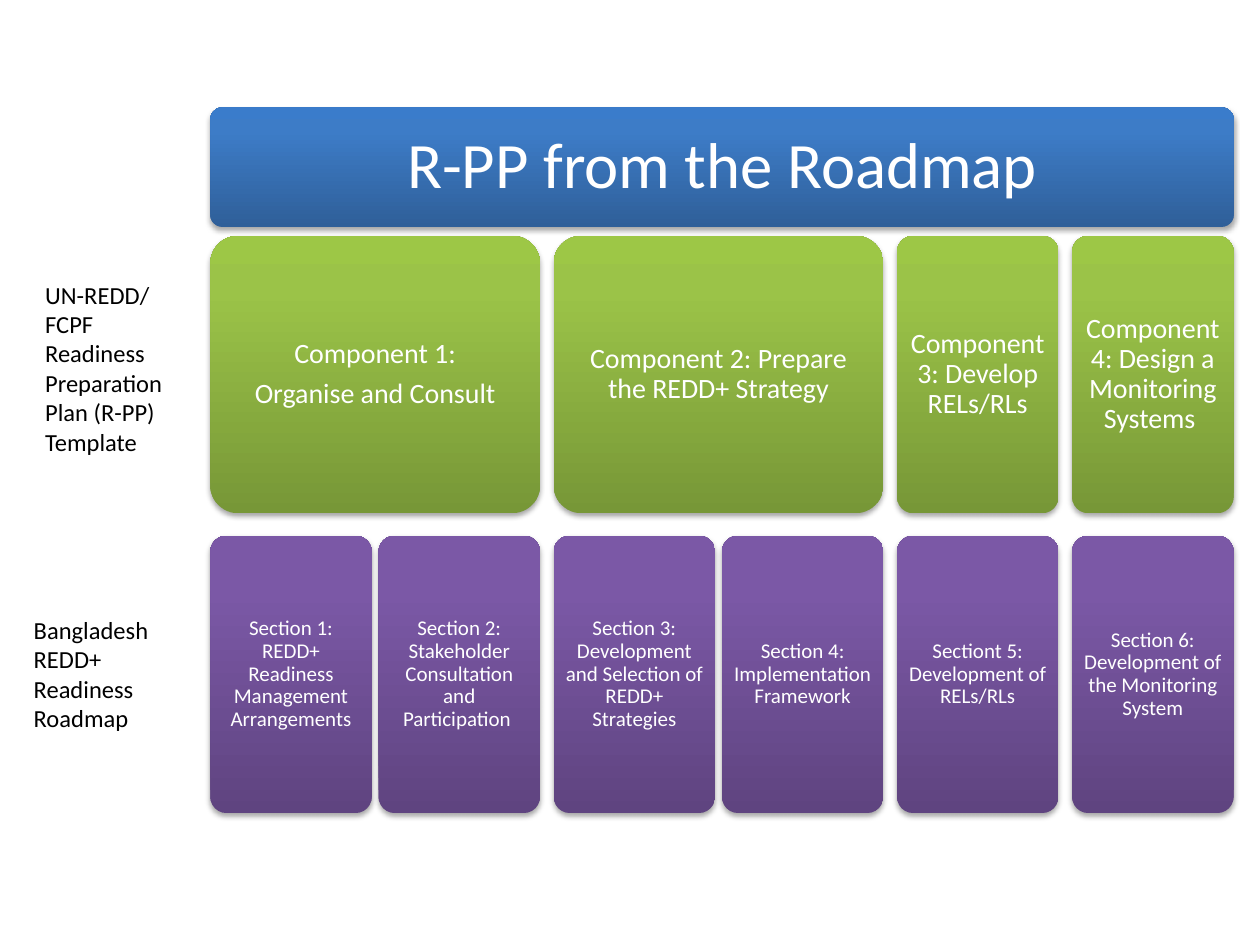
from copy import deepcopy

from lxml import etree
from pptx import Presentation
from pptx.dml.color import RGBColor
from pptx.enum.shapes import MSO_SHAPE
from pptx.enum.text import MSO_ANCHOR, MSO_AUTO_SIZE, PP_ALIGN
from pptx.oxml.ns import qn
from pptx.util import Pt

ROUND = MSO_SHAPE.ROUNDED_RECTANGLE
MIDDLE = MSO_ANCHOR.MIDDLE
FIXED = MSO_AUTO_SIZE.NONE
GROW = MSO_AUTO_SIZE.SHAPE_TO_FIT_TEXT
CENTER = PP_ALIGN.CENTER

WHITE = RGBColor(0xFF, 0xFF, 0xFF)
BLACK = RGBColor(0, 0, 0)
BLUE = (RGBColor(0x2F, 0x5F, 0x99), RGBColor(0x3D, 0x7C, 0xC7), RGBColor(0x3A, 0x7C, 0xCB))
GREEN = (RGBColor(0x77, 0x97, 0x37), RGBColor(0x9B, 0xC3, 0x48), RGBColor(0x9D, 0xC7, 0x46))
PURPLE = (RGBColor(0x5F, 0x44, 0x80), RGBColor(0x7B, 0x58, 0xA6), RGBColor(0x7C, 0x57, 0xA8))

FONT = "Calibri"
LEFT, COL = 120.2, 92.3
NEAR, FAR = 3.85, 7.75
HEAD_TOP, HEAD_H = 61.4, 68.3
COMP_TOP, SECT_TOP, CARD_H = 134.8, 306.1, 158.5

GROUPS = [
    (["Component 1:", "Organise and Consult"],
     ["Section 1: REDD+ Readiness Management Arrangements",
      "Section 2: Stakeholder Consultation and Participation "]),
    (["Component 2: Prepare the REDD+ Strategy"],
     ["Section 3: Development and Selection of REDD+ Strategies",
      "Section 4: Implementation Framework"]),
    (["Component 3: Develop RELs/RLs"],
     ["Sectiont 5: Development of RELs/RLs"]),
    (["Component 4: Design a Monitoring Systems "],
     ["Section 6: Development of the Monitoring System"]),
]
LABELS = [
    ("UN-REDD/FCPF Readiness Preparation Plan (R-PP) Template", 18.7, 156.2, 90, 108.7),
    ("Bangladesh REDD+ Readiness Roadmap", 12.2, 347.8, 89.3, 74.9),
]


def add_run(para, text, size, color):
    run = para.add_run()
    run.text = text
    run.font.name = FONT
    run.font.size = Pt(size)
    run.font.color.rgb = color


def write(frame, lines, size, inset):
    frame.word_wrap = True
    frame.auto_size = FIXED
    frame.vertical_anchor = MIDDLE
    frame.margin_left = frame.margin_right = Pt(inset)
    frame.margin_top = frame.margin_bottom = Pt(inset)
    for i, line in enumerate(lines):
        para = frame.add_paragraph() if i else frame.paragraphs[0]
        para.alignment = CENTER
        para.line_spacing = 0.9
        para.space_before = Pt(0)
        para.space_after = Pt(size * 0.35)
        add_run(para, line, size, WHITE)


def shade(shape, tones):
    fill = shape.fill
    fill.gradient()
    fill.gradient_angle = 90
    stops = shape.element.spPr.find(".//" + qn("a:gsLst"))
    stops.append(deepcopy(stops[-1]))
    for stop, tone, place in zip(fill.gradient_stops, tones, (0, 0.8, 1)):
        stop.color.rgb = tone
        stop.position = place


def drop_shadow(shape):
    shape.shadow.inherit = False
    effects = shape.element.spPr.find(qn("a:effectLst"))
    outer = etree.SubElement(effects, qn("a:outerShdw"), blurRad=str(Pt(3.1)),
                             dist=str(Pt(1.8)), dir="5400000", rotWithShape="0")
    color = etree.SubElement(outer, qn("a:srgbClr"), val="000000")
    etree.SubElement(color, qn("a:alpha"), val="35000")


def add_card(slide, x, y, w, h, tones):
    card = slide.shapes.add_shape(ROUND, Pt(x), Pt(y), Pt(w), Pt(h))
    card.adjustments[0] = 0.1
    card.line.fill.background()
    shade(card, tones)
    drop_shadow(card)
    return card


def add_title(slide, text, width):
    card = add_card(slide, LEFT, HEAD_TOP, width, HEAD_H, BLUE)
    title = slide.shapes.title
    title.left, title.top = card.left, card.top
    title.width, title.height = card.width, card.height
    write(title.text_frame, [text], 37, 10.8)
    card.element.addnext(title.element)


def add_group(slide, x, lines, parts):
    width = len(parts) * (COL + NEAR) - NEAR
    card = add_card(slide, x, COMP_TOP, width, CARD_H, GREEN)
    write(card.text_frame, lines, 16, 4.8)
    for i, part in enumerate(parts):
        card = add_card(slide, x + i * (COL + NEAR), SECT_TOP, COL, CARD_H, PURPLE)
        write(card.text_frame, [part], 12, 3.6)
    return x + width + FAR


def add_label(slide, text, x, y, w, h):
    box = slide.shapes.add_textbox(Pt(x), Pt(y), Pt(w), Pt(h))
    frame = box.text_frame
    frame.word_wrap = True
    frame.auto_size = GROW
    add_run(frame.paragraphs[0], text, 14, BLACK)


def main():
    deck = Presentation()
    deck.slide_width, deck.slide_height = Pt(720), Pt(540)
    slide = deck.slides.add_slide(deck.slide_layouts[5])
    x = LEFT
    for lines, parts in GROUPS:
        x = add_group(slide, x, lines, parts)
    add_title(slide, "R-PP from the Roadmap", x - FAR - LEFT)
    for label in LABELS:
        add_label(slide, *label)
    deck.save("out.pptx")


if __name__ == "__main__":
    main()
